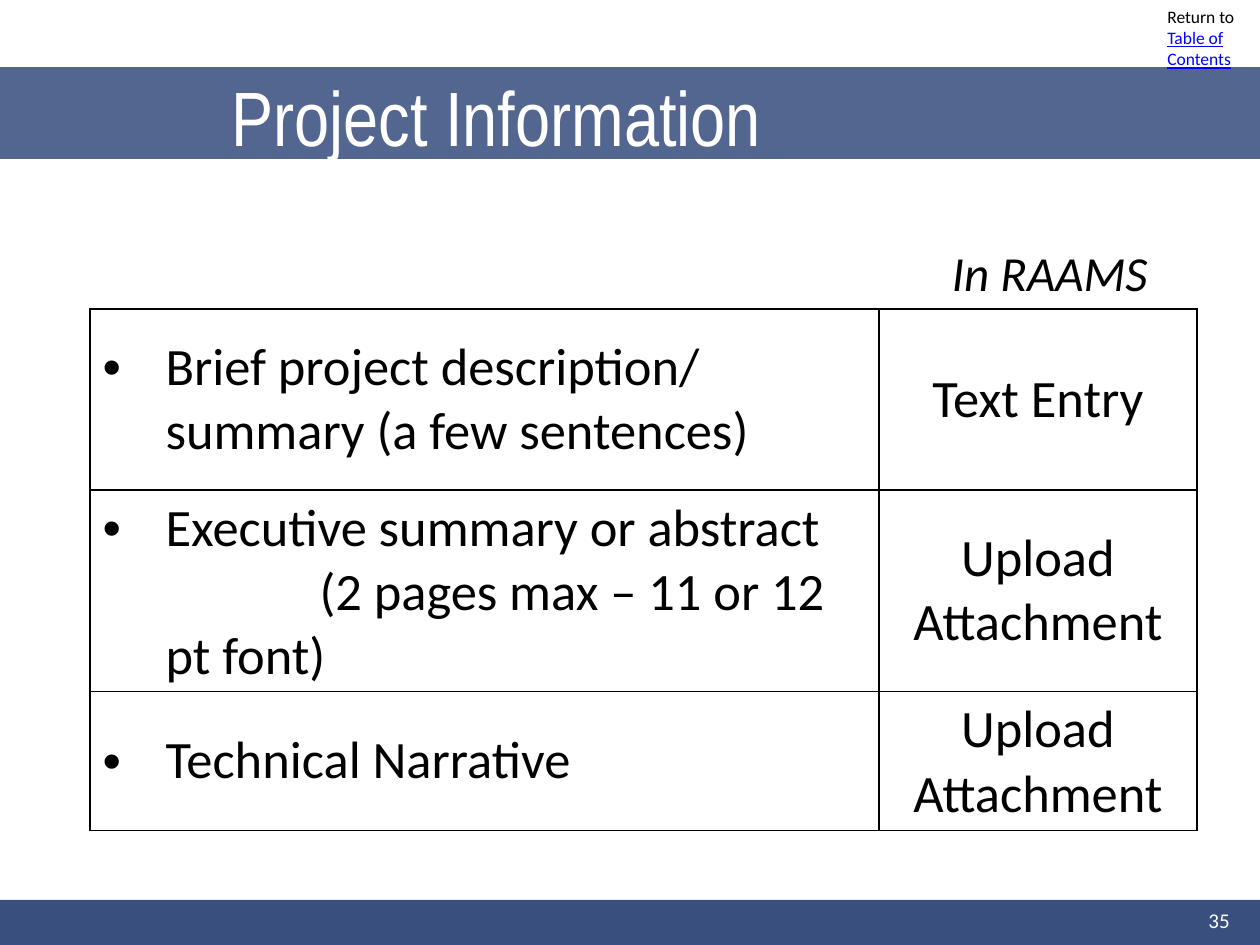
from lxml import etree
from pptx import Presentation
from pptx import util as u
from pptx.dml.color import RGBColor
from pptx.enum import shapes, text
from pptx.oxml import ns

PX = 914400 / 126
NAVY = RGBColor(0x39, 0x50, 0x7F)
BLACK = RGBColor(0, 0, 0)
WHITE = RGBColor(255, 255, 255)
BLUE = RGBColor(0, 0, 255)
LEFT, MID, RIGHT = text.PP_ALIGN.LEFT, text.PP_ALIGN.CENTER, text.PP_ALIGN.RIGHT


def px(*nums):
    return [u.Emu(round(n * PX)) for n in nums]


def style(para, size, color=BLACK, face="Calibri", align=LEFT):
    para.alignment = align
    para.font.size = u.Pt(size)
    para.font.name = face
    para.font.color.rgb = color


deck = Presentation()
deck.slide_width, deck.slide_height = px(1260, 945)
slide = deck.slides.add_slide(deck.slide_layouts[6])

for top, high, alpha in [(900, 48, 100), (67, 92, 87)]:
    band = slide.shapes.add_shape(shapes.MSO_SHAPE.RECTANGLE, *px(0, top, 1260, high))
    band.shadow.inherit = False
    band.line.fill.background()
    band.fill.solid()
    band.fill.fore_color.rgb = NAVY
    if alpha < 100:
        tint = band.fill._xPr.find(".//" + ns.qn("a:srgbClr"))
        etree.SubElement(tint, ns.qn("a:alpha"), val=str(alpha * 1000))

TOP, CENTER = text.MSO_ANCHOR.TOP, text.MSO_ANCHOR.MIDDLE
labels = [
    ((1155, 0, 105, 77), "Return to ", 10, BLACK, "Calibri", LEFT, TOP),
    ((219, 37, 617, 157), "Project Information", 44, WHITE, "Arial Narrow", LEFT, CENTER),
    ((21, 236, 1139, 624), "In RAAMS", 28, BLACK, "Calibri", RIGHT, TOP),
    ((949, 895, 293, 50), "35", 12, WHITE, "Calibri", RIGHT, CENTER),
]
paras = []
for place, words, size, color, face, align, anchor in labels:
    frame = slide.shapes.add_textbox(*px(*place)).text_frame
    frame.word_wrap = True
    frame.vertical_anchor = anchor
    para = frame.paragraphs[0]
    para.text = words
    style(para, size, color, face, align)
    paras.append(para)

link = paras[0].add_run()
link.text = "Table of Contents"
link.font.color.rgb = BLUE
link.font.underline = True
paras[2].font.italic = True

rows = [
    (181, ["Brief project description/ summary (a few sentences)"], "Text Entry"),
    (181, ["Executive summary or abstract", "(2 pages max – 11 or 12 pt font)"], "Upload Attachment"),
    (127, ["Technical Narrative"], "Upload Attachment"),
]
table_shape = slide.shapes.add_table(len(rows), 2, *px(90, 309, 1107, 489))
table = table_shape.table
table.first_row = table.horz_banding = False
for col, wide in zip(table.columns, px(789, 318)):
    col.width = wide

for row, (high, items, entry) in zip(table.rows, rows):
    row.height = px(high)[0]
    for cell, lines, align in zip(row.cells, (items, [entry]), (LEFT, MID)):
        cell.vertical_anchor = CENTER
        cell.text = "\n".join(lines)
        for num, para in enumerate(cell.text_frame.paragraphs):
            if align == LEFT:
                props = para._p.get_or_add_pPr()
                props.set("marL", str(px(63)[0]))
                props.set("indent", str(px(154 if num else -63)[0]))
                if num == 0:
                    etree.SubElement(props, ns.qn("a:buFont"), typeface="Arial")
                    etree.SubElement(props, ns.qn("a:buChar"), char="•")
            style(para, 30, align=align)
        props = cell._tc.get_or_add_tcPr()
        for side in "LRTB":
            edge = etree.SubElement(props, ns.qn("a:ln" + side), w=str(u.Pt(1)))
            fill = etree.SubElement(edge, ns.qn("a:solidFill"))
            etree.SubElement(fill, ns.qn("a:srgbClr"), val=str(BLACK))
        cell.fill.background()

deck.save("out.pptx")
